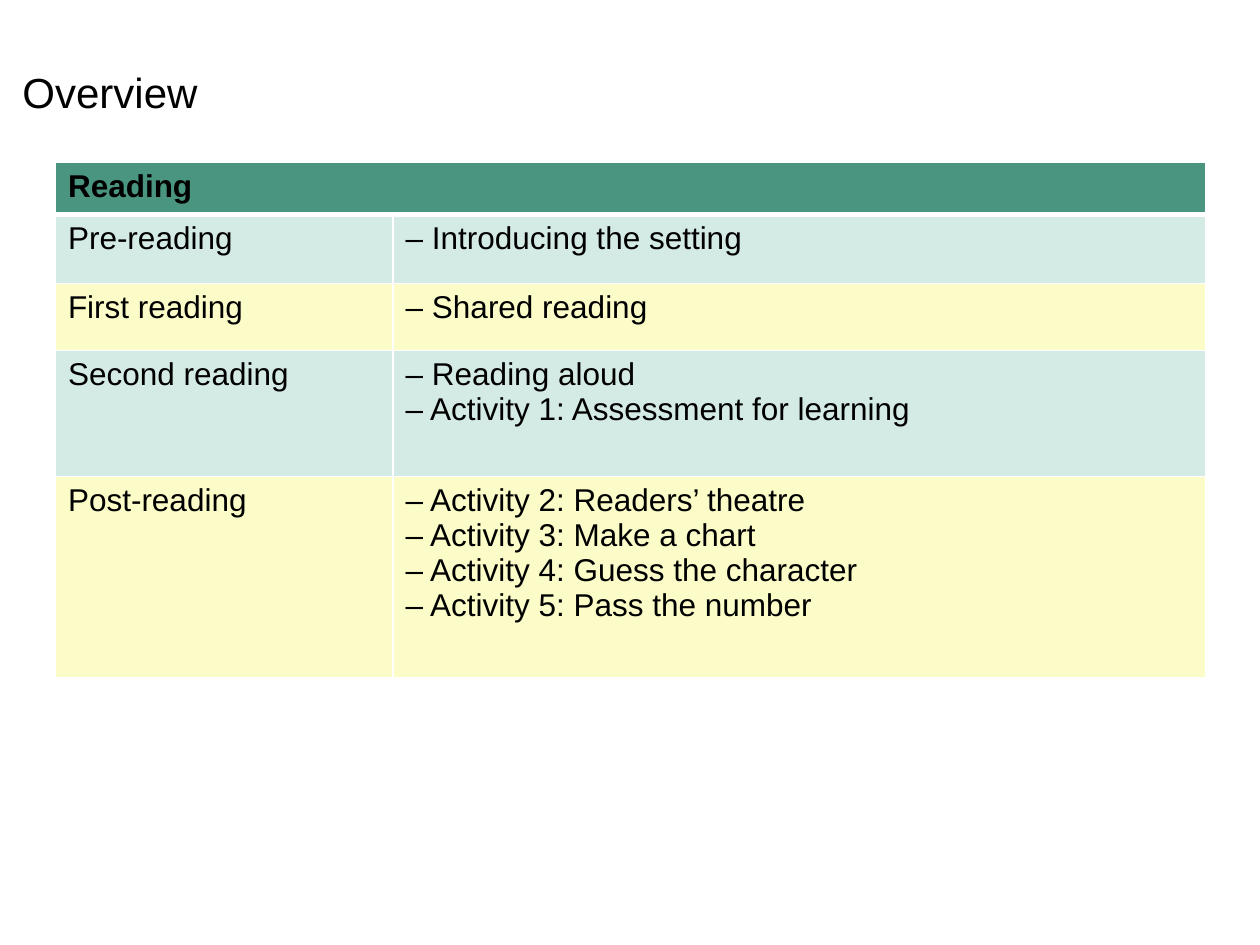
from lxml import etree
from pptx import Presentation
from pptx import util as u
from pptx.dml.color import RGBColor
from pptx.oxml import ns

TITLE = "Overview"
HEADER = "Reading"
# stage, its activities, row height in inches
STAGES = [
    ("Pre-reading", ["Introducing the setting"], 0.55),
    ("First reading", ["Shared reading"], 0.53),
    ("Second reading", ["Reading aloud", "Activity 1: Assessment for learning"], 1.0),
    ("Post-reading", ["Activity 2: Readers’ theatre", "Activity 3: Make a chart",
                      "Activity 4: Guess the character", "Activity 5: Pass the number"], 1.6),
]
HEADER_HEIGHT = 0.41
COLUMN_WIDTHS = [2.68, 6.45]
THEME = {
    "font": "Arial", "text": "000000", "header": "499580",
    "bands": ["D4EAE4", "FBFCC8"], "border": "FFFFFF",
    "title_size": 24, "table_size": 18,
}


def write(frame, lines, size=THEME["table_size"], bold=False):
    for index, line in enumerate(lines):
        paragraph = frame.paragraphs[0] if index == 0 else frame.add_paragraph()
        run = paragraph.add_run()
        run.text = line
        run.font.name = THEME["font"]
        run.font.size = u.Pt(size)
        run.font.bold = bold
        run.font.color.rgb = RGBColor.from_string(THEME["text"])


def set_borders(cell, bottom=1, top=1):
    """Draw the four cell borders, ahead of the fill as the schema requires."""
    properties = cell._tc.get_or_add_tcPr()
    widths = {"lnL": 1, "lnR": 1, "lnT": top, "lnB": bottom}
    for position, (side, width) in enumerate(widths.items()):
        line = etree.Element(ns.qn(f"a:{side}"), w=str(u.Pt(width)))
        fill = etree.SubElement(line, ns.qn("a:solidFill"))
        etree.SubElement(fill, ns.qn("a:srgbClr"), val=THEME["border"])
        properties.insert(position, line)


def format_cell(cell, color, **borders):
    cell.fill.solid()
    cell.fill.fore_color.rgb = RGBColor.from_string(color)
    set_borders(cell, **borders)


def add_title(slide):
    title = slide.shapes.add_textbox(u.Inches(0.08), u.Inches(0.48),
                                     u.Inches(1.61), u.Inches(0.5))
    title.text_frame.word_wrap = False
    write(title.text_frame, [TITLE], size=THEME["title_size"])


def add_reading_table(slide):
    heights = [HEADER_HEIGHT] + [height for _, _, height in STAGES]
    table = slide.shapes.add_table(
        len(heights), len(COLUMN_WIDTHS), u.Inches(0.44), u.Inches(1.29),
        u.Inches(sum(COLUMN_WIDTHS)), u.Inches(sum(heights))).table
    for column, width in zip(table.columns, COLUMN_WIDTHS):
        column.width = u.Inches(width)
    for row, height in zip(table.rows, heights):
        row.height = u.Inches(height)

    table.cell(0, 0).merge(table.cell(0, 1))
    for cell in table.rows[0].cells:
        format_cell(cell, THEME["header"], bottom=3)
    write(table.cell(0, 0).text_frame, [HEADER], bold=True)

    for index, (stage, activities, _) in enumerate(STAGES):
        band = THEME["bands"][index % 2]
        contents = [[stage], [f"– {activity}" for activity in activities]]
        for cell, lines in zip(table.rows[index + 1].cells, contents):
            format_cell(cell, band, top=3 if index == 0 else 1)
            write(cell.text_frame, lines)


def main():
    presentation = Presentation()
    presentation.slide_width = u.Inches(10)
    presentation.slide_height = u.Inches(7.5)
    slide = presentation.slides.add_slide(presentation.slide_layouts[6])
    add_title(slide)
    add_reading_table(slide)
    presentation.save("out.pptx")


if __name__ == "__main__":
    main()
